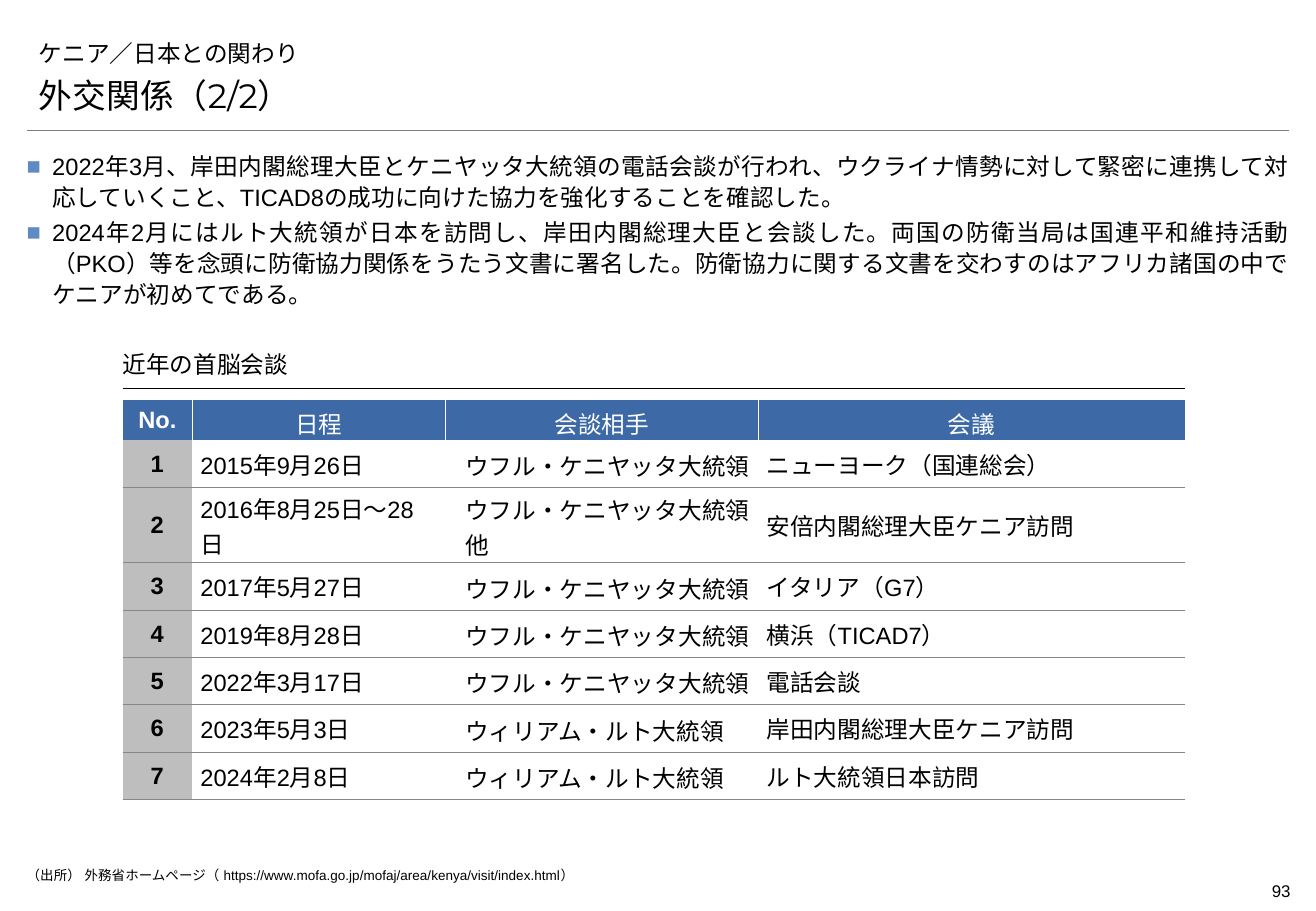
from lxml.etree import SubElement
from pptx import Presentation
from pptx.dml.color import RGBColor
from pptx.enum.shapes import MSO_CONNECTOR
from pptx.enum.text import MSO_ANCHOR, PP_ALIGN
from pptx.oxml.ns import qn
from pptx.util import Inches, Pt

COLORS = {
    "text": "000000",
    "white": "FFFFFF",
    "header": "3D6AA7",
    "number": "BEBEBE",
    "row_line": "868686",
    "title_line": "7F7F7F",
    "bullet": "5F8AC3",
}
JAPANESE_FONT = "Noto Sans CJK JP"
NO_STYLE = "{2D5ABB26-0587-4C30-8999-92F81FD0307C}"
LEFT = 0.22
TABLE_LEFT = 1.01
TABLE_WIDTH = 8.74
COLUMN_WIDTHS = [0.57, 2.09, 2.57, 3.51]
HEADER_HEIGHT = 0.33
ROW_HEIGHT = 0.39
TALL_ROW_HEIGHT = 0.62

BULLETS = [
    "2022年3月、岸田内閣総理大臣とケニヤッタ大統領の電話会談が行われ、ウクライナ情勢に対して緊密に連携して対応していくこと、TICAD8の成功に向けた協力を強化することを確認した。",
    "2024年2月にはルト大統領が日本を訪問し、岸田内閣総理大臣と会談した。両国の防衛当局は国連平和維持活動（PKO）等を念頭に防衛協力関係をうたう文書に署名した。防衛協力に関する文書を交わすのはアフリカ諸国の中でケニアが初めてである。",
]
HEADERS = ["No.", "日程", "会談相手", "会議"]
MEETINGS = [
    ("2015年9月26日", "ウフル・ケニヤッタ大統領", "ニューヨーク（国連総会）"),
    ("2016年8月25日～28日", "ウフル・ケニヤッタ大統領他", "安倍内閣総理大臣ケニア訪問"),
    ("2017年5月27日", "ウフル・ケニヤッタ大統領", "イタリア（G7）"),
    ("2019年8月28日", "ウフル・ケニヤッタ大統領", "横浜（TICAD7）"),
    ("2022年3月17日", "ウフル・ケニヤッタ大統領", "電話会談"),
    ("2023年5月3日", "ウィリアム・ルト大統領", "岸田内閣総理大臣ケニア訪問"),
    ("2024年2月8日", "ウィリアム・ルト大統領", "ルト大統領日本訪問"),
]
NUMBER_INSETS = (0.04, 0.03, 0.04, 0.03)
BODY_INSETS = [(0.07, 0.03, 0.07, 0.03), (0.16, 0.04, 0.02, 0.02), (0.07, 0.03, 0.07, 0.03)]


def rgb(name):
    return RGBColor.from_string(COLORS[name])


def set_insets(target, insets):
    target.margin_left, target.margin_top, target.margin_right, target.margin_bottom = map(Inches, insets)


def format_runs(paragraph, size, font="Arial", east_asian=None, color="text", bold=False):
    for run in paragraph.runs:
        run.font.size = Pt(size)
        run.font.name = font
        run.font.bold = bold
        run.font.color.rgb = rgb(color)
        SubElement(run.font._element, qn("a:ea"), typeface=east_asian or font)


def add_text(slide, box, text, size, font="Arial", insets=(0.1, 0.05, 0.1, 0.05),
             anchor=MSO_ANCHOR.TOP, align=PP_ALIGN.LEFT):
    frame = slide.shapes.add_textbox(*map(Inches, box)).text_frame
    frame.word_wrap = True
    frame.vertical_anchor = anchor
    set_insets(frame, insets)
    frame.text = text
    for paragraph in frame.paragraphs:
        paragraph.alignment = align
        format_runs(paragraph, size, font)
    return frame


def add_bullet(paragraph):
    properties = paragraph._p.get_or_add_pPr()
    properties.set("marL", str(Inches(0.21)))
    properties.set("indent", str(Inches(-0.21)))
    bullet_color = SubElement(properties, qn("a:buClr"))
    SubElement(bullet_color, qn("a:srgbClr"), val=COLORS["bullet"])
    SubElement(properties, qn("a:buFont"), typeface="Arial")
    SubElement(properties, qn("a:buChar"), char="■")
    paragraph.line_spacing = 1.1
    paragraph.space_after = Pt(2)


def add_line(slide, left, top, width, color, weight):
    line = slide.shapes.add_connector(
        MSO_CONNECTOR.STRAIGHT, Inches(left), Inches(top), Inches(left + width), Inches(top))
    line.line.color.rgb = rgb(color)
    line.line.width = Pt(weight)
    SubElement(line._element.spPr, qn("a:effectLst"))


def add_borders(cell, borders):
    properties = cell._tc.get_or_add_tcPr()
    for position, side in enumerate(side for side in "LRTB" if side in borders):
        border = SubElement(properties, qn(f"a:ln{side}"), w=str(Pt(0.5)))
        fill = SubElement(border, qn("a:solidFill"))
        SubElement(fill, qn("a:srgbClr"), val=COLORS[borders[side]])
        properties.insert(position, border)


def fill_cell(cell, text, insets, fill, borders, color="text", bold=False, align=PP_ALIGN.LEFT):
    cell.text = text
    cell.vertical_anchor = MSO_ANCHOR.MIDDLE
    set_insets(cell, insets)
    if fill:
        cell.fill.solid()
        cell.fill.fore_color.rgb = rgb(fill)
    else:
        cell.fill.background()
    add_borders(cell, borders)
    paragraph = cell.text_frame.paragraphs[0]
    paragraph.alignment = align
    format_runs(paragraph, 14, "Arial", JAPANESE_FONT, color, bold)


def add_meeting_table(slide):
    heights = [HEADER_HEIGHT] + [
        TALL_ROW_HEIGHT if "～" in date else ROW_HEIGHT for date, _, _ in MEETINGS]
    frame = slide.shapes.add_table(
        len(heights), len(HEADERS), Inches(TABLE_LEFT), Inches(3.29),
        Inches(TABLE_WIDTH), Inches(sum(heights)))
    table = frame.table
    table._tbl.tblPr.find(qn("a:tableStyleId")).text = NO_STYLE
    table.horz_banding = False
    for column, width in zip(table.columns, COLUMN_WIDTHS):
        column.width = Inches(width)
    for row, height in zip(table.rows, heights):
        row.height = Inches(height)

    last = len(HEADERS) - 1
    for index, header in enumerate(HEADERS):
        borders = {}
        if index > 0:
            borders["L"] = "white"
        if index < last:
            borders["R"] = "white"
        insets = (0.04, 0.05, 0.04, 0 if index else 0.05)
        fill_cell(table.cell(0, index), header, insets, "header", borders,
                  "white", index == 0, PP_ALIGN.CENTER)

    for number, meeting in enumerate(MEETINGS, start=1):
        borders = {"B": "row_line"}
        if number > 1:
            borders["T"] = "row_line"
        fill_cell(table.cell(number, 0), str(number), NUMBER_INSETS, "number", borders,
                  bold=True, align=PP_ALIGN.CENTER)
        for index, (text, insets) in enumerate(zip(meeting, BODY_INSETS), start=1):
            fill_cell(table.cell(number, index), text, insets, None, borders)


def main():
    presentation = Presentation()
    presentation.slide_width = Inches(10.83)
    presentation.slide_height = Inches(7.5)
    slide = presentation.slides.add_slide(presentation.slide_layouts[6])

    add_line(slide, LEFT, 1.07, 10.39, "title_line", 0.25)
    add_text(slide, (9.83, 7.2, 0.79, 0.27), "93", 10, insets=(0, 0.05, 0, 0.05), align=PP_ALIGN.RIGHT)
    add_text(slide, (LEFT, 0.26, 10.39, 0.34), "ケニア／日本との関わり", 14, "Montserrat",
             anchor=MSO_ANCHOR.BOTTOM)
    add_text(slide, (LEFT, 0.56, 10.39, 0.44), "外交関係（2/2）", 20, "Montserrat",
             anchor=MSO_ANCHOR.BOTTOM)
    bullets = add_text(slide, (LEFT, 1.23, 10.39, 1.3), "\n".join(BULLETS), 14,
                       insets=(0, 0, 0, 0), align=PP_ALIGN.JUSTIFY)
    for paragraph in bullets.paragraphs:
        add_bullet(paragraph)
    add_text(slide, (LEFT, 7.14, 10, 0.16),
             "（出所） 外務省ホームページ（ https://www.mofa.go.jp/mofaj/area/kenya/visit/index.html）",
             8, insets=(0, 0, 0, 0))
    add_line(slide, TABLE_LEFT, 3.2, TABLE_WIDTH, "text", 0.75)
    add_text(slide, (TABLE_LEFT, 2.88, TABLE_WIDTH, 0.31), "近年の首脳会談", 14, "Montserrat",
             insets=(0, 0.05, 0, 0.08), anchor=MSO_ANCHOR.BOTTOM)
    add_meeting_table(slide)
    presentation.save("out.pptx")


if __name__ == "__main__":
    main()
